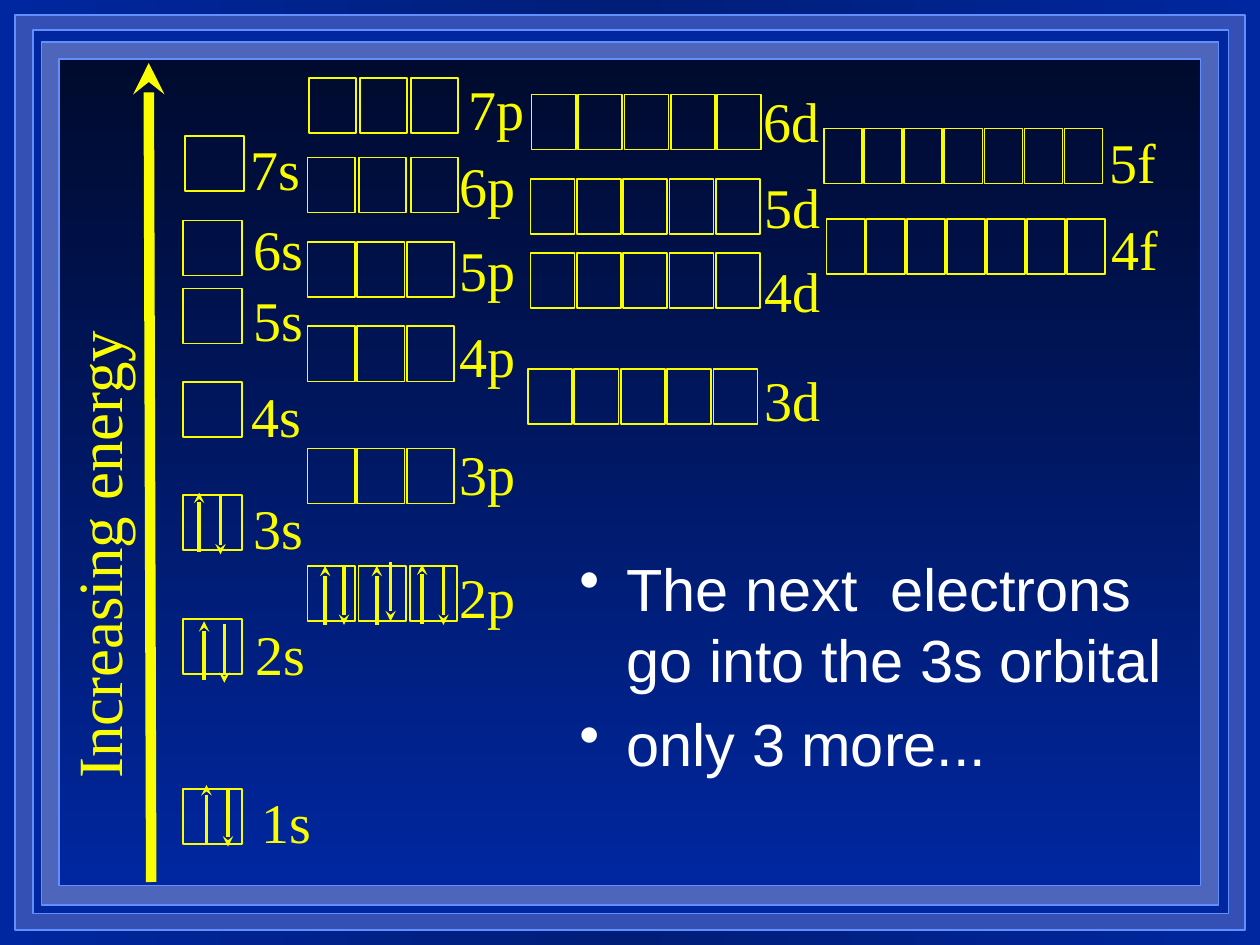
from dataclasses import dataclass
from copy import deepcopy

from pptx import Presentation
from pptx.dml.color import RGBColor as RGB
from pptx.enum.shapes import MSO_CONNECTOR as CONNECTOR, MSO_SHAPE as SHAPE
from pptx.enum.text import MSO_AUTO_SIZE as AUTO_SIZE
from pptx.oxml.ns import qn
from pptx.util import Pt
from lxml.etree import SubElement


@dataclass(frozen=True)
class Theme:
    yellow: str = "FAFD00"
    white: str = "FFFFFF"
    frame_line: str = "618FFD"
    blue: str = "00279F"
    deep_blue: str = "001D78"
    night: str = "000A2E"
    outer_ring: str = "3450B4"
    inner_ring: str = "4D66BC"
    serif: str = "Times New Roman"
    sans: str = "Arial"
    label_size: int = 32
    bullet_size: int = 34
    axis_size: int = 36


THEME = Theme()
BOX_HEIGHT = 31.5
SPIN_LENGTH = 33.8

# left, top, width, height, fill colours from top to bottom
FRAMES = [
    (8.6, 8.6, 702.7, 522.7, [THEME.outer_ring]),
    (18.7, 17.3, 683.3, 504.7, [THEME.blue]),
    (23.8, 23.8, 672.5, 493.2, [THEME.inner_ring]),
    (33.8, 33.8, 652.3, 472.3, [THEME.night, THEME.blue]),
]

# type of subshell: number of boxes, box width, label width
SUBSHELLS = {"s": (1, 33.8, 63.4), "p": (3, 27, 49.7),
             "d": (5, 25.2, 49), "f": (7, 21.8, 49)}

# name, left, top, pitch of the boxes, label left, label top
ORBITALS = [
    ("1s", 104.4, 450.7, 0, 142.6, 446.4),
    ("2s", 104.4, 353.5, 0, 139, 350.6),
    ("3s", 104.4, 283, 0, 137.5, 278.6),
    ("4s", 104.4, 218.2, 0, 136.8, 214.6),
    ("5s", 104.4, 164.9, 0, 137.5, 159.8),
    ("6s", 104.4, 126, 0, 137.5, 118.8),
    ("7s", 105.8, 77.8, 0, 136.1, 73.4),
    ("2p", 175.7, 323.3, 29.2, 255.6, 318.2),
    ("3p", 175.7, 256.3, 28.4, 255.6, 247.7),
    ("4p", 175.7, 186.5, 28.4, 255.6, 180),
    ("5p", 175.7, 138.2, 28.4, 255.6, 131),
    ("6p", 175.7, 90, 29.5, 255.6, 82.8),
    ("7p", 176.4, 44.6, 29.2, 260.6, 38.9),
    ("3d", 301.7, 211, 26.5, 429.8, 205.2),
    ("4d", 303.1, 144.7, 26.5, 429.8, 143.3),
    ("5d", 303.1, 102.2, 26.5, 429.8, 95),
    ("6d", 303.8, 54, 26.5, 429.1, 46.1),
    ("4f", 472.3, 125.3, 22.9, 627.8, 118.8),
    ("5f", 470.9, 73.4, 22.9, 627.1, 69.1),
]

# x and tip of the upward arrow, then x and tip of the downward arrow
ELECTRON_PAIRS = [
    (118, 448.6, 130.3, 483.8),
    (116.6, 355, 128.2, 390.2),
    (185.8, 323.3, 196.6, 357.1),
    (215.3, 323.3, 223.2, 355),
    (241.2, 322.6, 253.4, 357.1),
    (113.8, 281.5, 126, 316.8),
]


def write(paragraph, text, *, size, color, font, before=0, bullet=False):
    """Fill a paragraph; before is its space above in percent of a line."""
    run = paragraph.add_run()
    run.text = text
    run.font.size = Pt(size)
    run.font.name = font
    run.font.color.rgb = RGB.from_string(color)
    props = paragraph._p.get_or_add_pPr()
    if before:
        space = SubElement(props, qn("a:spcBef"))
        SubElement(space, qn("a:spcPct"), val=str(before * 1000))
    if bullet:
        indent = Pt(27)
        props.set("marL", str(indent))
        props.set("indent", str(-indent))
        SubElement(props, qn("a:buChar"), char="•")


class Board:
    """Holds the theme and the slide being drawn; lengths are in points."""

    def __init__(self, slide, theme):
        self.slide = slide
        self.theme = theme

    def background(self):
        fill = self.slide.background.fill
        fill.gradient()
        fill.gradient_angle = 0
        stops = self.slide.element.find(".//" + qn("a:gsLst"))
        stops.insert(1, deepcopy(stops[0]))
        colors = (self.theme.blue, self.theme.deep_blue, self.theme.blue)
        for stop, color, place in zip(fill.gradient_stops, colors, (0, 0.5, 1)):
            stop.color.rgb = RGB.from_string(color)
            stop.position = place

    def rectangle(self, left, top, width, height, line, colors=()):
        """No colour leaves it open, one fills it, two fade downwards."""
        rect = self.slide.shapes.add_shape(
            SHAPE.RECTANGLE, Pt(left), Pt(top), Pt(width), Pt(height))
        rect.shadow.inherit = False
        rect.line.color.rgb = RGB.from_string(line)
        rect.line.width = Pt(1)
        if not colors:
            rect.fill.background()
        elif len(colors) == 1:
            rect.fill.solid()
            rect.fill.fore_color.rgb = RGB.from_string(colors[0])
        else:
            rect.fill.gradient()
            rect.fill.gradient_angle = 270
            for place, (stop, color) in enumerate(zip(rect.fill.gradient_stops, colors)):
                stop.color.rgb = RGB.from_string(color)
                stop.position = place

    def arrow(self, x1, y1, x2, y2, width):
        arrow = self.slide.shapes.add_connector(
            CONNECTOR.STRAIGHT, Pt(x1), Pt(y1), Pt(x2), Pt(y2))
        arrow.line.color.rgb = RGB.from_string(self.theme.yellow)
        arrow.line.width = Pt(width)
        SubElement(arrow.line._get_or_add_ln(), qn("a:tailEnd"), type="stealth")
        SubElement(arrow._element.spPr, qn("a:effectLst"))

    def text(self, left, top, width, height, lines, rotation=0, **style):
        box = self.slide.shapes.add_textbox(Pt(left), Pt(top), Pt(width), Pt(height))
        box.rotation = rotation
        frame = box.text_frame
        frame.word_wrap = True
        frame.auto_size = AUTO_SIZE.NONE
        for number, line in enumerate(lines):
            paragraph = frame.add_paragraph() if number else frame.paragraphs[0]
            write(paragraph, line, **style)

    def orbital(self, name, left, top, pitch, label_left, label_top):
        theme = self.theme
        count, box_width, label_width = SUBSHELLS[name[-1]]
        for column in range(count):
            self.rectangle(left + column * pitch, top, box_width, BOX_HEIGHT, theme.yellow)
        self.text(label_left, label_top, label_width, 45.4, [name], before=50,
                  size=theme.label_size, color=theme.yellow, font=theme.serif)

    def electron_pair(self, up_x, up_tip, down_x, down_tip):
        self.arrow(up_x, up_tip + SPIN_LENGTH, up_x, up_tip, 2)
        self.arrow(down_x, down_tip - SPIN_LENGTH, down_x, down_tip, 2)


def main():
    deck = Presentation()
    deck.slide_width, deck.slide_height = Pt(720), Pt(540)
    board = Board(deck.slides.add_slide(deck.slide_layouts[6]), THEME)

    board.background()
    for *place, colors in FRAMES:
        board.rectangle(*place, THEME.frame_line, colors)
    board.text(324, 311.8, 355, 188.6,
               ["The next  electrons go into the 3s orbital", "only 3 more..."],
               size=THEME.bullet_size, color=THEME.white, font=THEME.sans,
               before=20, bullet=True)
    board.arrow(86.4, 504, 85, 36, 6)
    board.text(-111.6, 259.9, 334.1, 50.4, ["Increasing energy"], rotation=270,
               size=THEME.axis_size, color=THEME.yellow, font=THEME.serif)
    for orbital in ORBITALS:
        board.orbital(*orbital)
    for pair in ELECTRON_PAIRS:
        board.electron_pair(*pair)

    deck.save("out.pptx")


if __name__ == "__main__":
    main()
